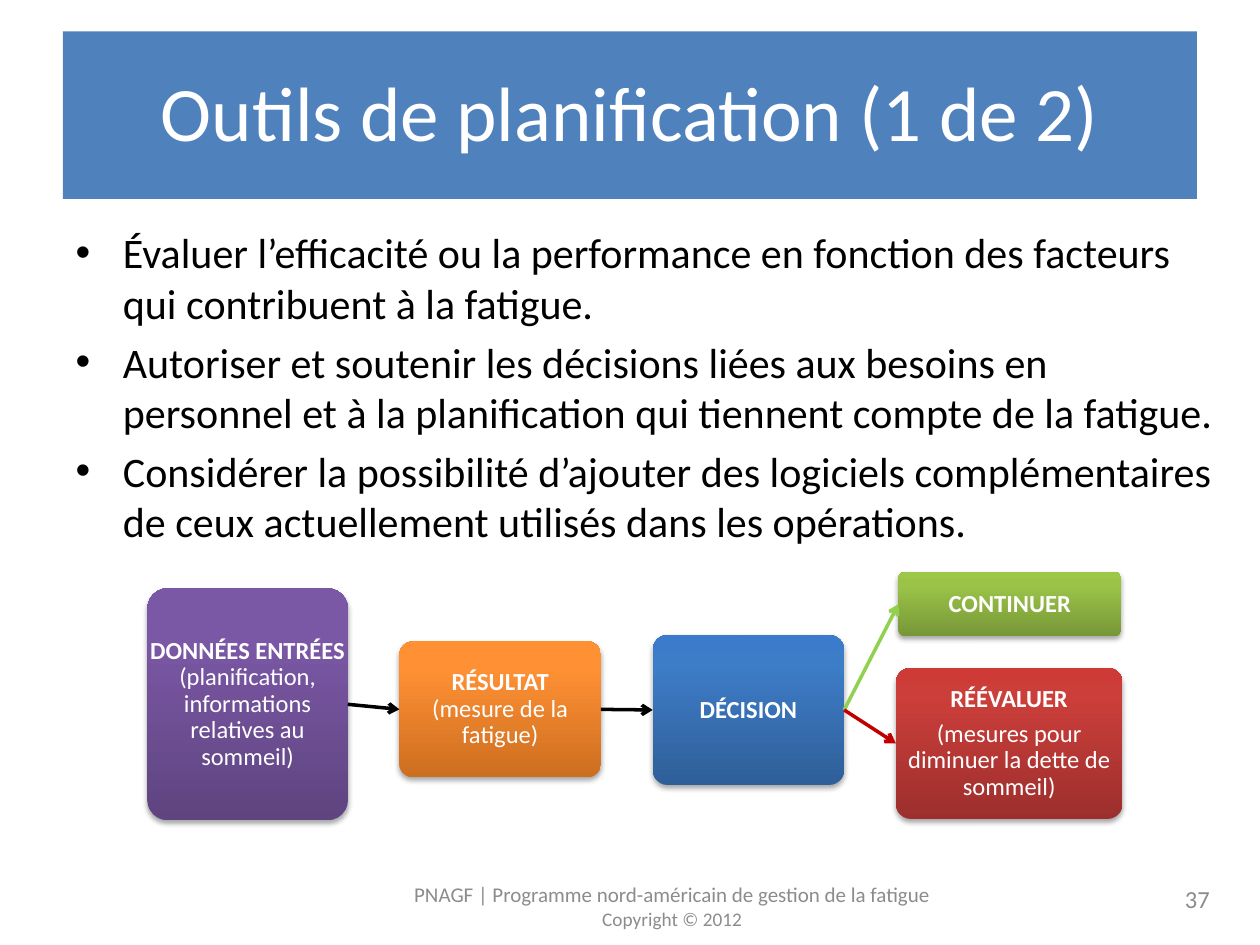
import pptx
import pptx.util
import pptx.dml.color
import pptx.enum.shapes
import pptx.enum.text
import pptx.oxml.ns
from lxml import etree

Inches = pptx.util.Inches
Pt = pptx.util.Pt
qn = pptx.oxml.ns.qn
ALIGN = pptx.enum.text.PP_ALIGN
ANCHOR = pptx.enum.text.MSO_ANCHOR
SHAPE = pptx.enum.shapes.MSO_SHAPE

COLORS = {
    "band": "4F81BD", "white": "FFFFFF", "black": "000000",
    "footer": "8C8C8C", "continue": "92D050", "reassess": "C00000",
}
FONT = "Calibri"
TITLE = "Outils de planification (1 de 2)"
BULLETS = [
    "Évaluer l’efficacité ou la performance en fonction des facteurs qui contribuent à la fatigue.",
    "Autoriser et soutenir les décisions liées aux besoins en personnel et à la planification qui tiennent compte de la fatigue.",
    "Considérer la possibilité d’ajouter des logiciels complémentaires de ceux actuellement utilisés dans les opérations.",
]
FOOTER = [("PNAGF | Programme nord-américain de gestion de la fatigue", 12), ("Copyright © 2012", 11)]
PAGE_NUMBER = [("37", 14)]

STEPS = {
    "input": {"box": (1.17, 4.67, 1.59, 1.84), "gradient": ("5F4480", "7B58A6", "7C57A8"),
              "paragraphs": [["DONNÉES ENTRÉES", "(planification, informations relatives au sommeil)"]]},
    "result": {"box": (3.17, 5.09, 1.6, 1.08), "gradient": ("CC6E20", "FF9034", "FF9136"),
               "paragraphs": [["RÉSULTAT", "(mesure de la fatigue)"]]},
    "decision": {"box": (5.18, 5.04, 1.52, 1.19), "gradient": ("2F5F99", "3D7CC7", "3A7CCB"),
                 "paragraphs": [["DÉCISION"]]},
    "continue": {"box": (7.13, 4.54, 1.77, 0.51), "gradient": ("779737", "9BC348", "9DC746"),
                 "paragraphs": [["CONTINUER"]]},
    "reassess": {"box": (7.11, 5.3, 1.8, 1.2), "gradient": ("9C2F2D", "CB3E3A", "CE3B37"),
                 "paragraphs": [["RÉÉVALUER"], ["(mesures pour diminuer la dette de sommeil)"]]},
}
ARROWS = [
    ("input", "result", "black"),
    ("result", "decision", "black"),
    ("decision", "continue", "continue"),
    ("decision", "reassess", "reassess"),
]
STOP_POSITIONS = (0, 80, 100)
STEP_PARAGRAPH = {"alignment": ALIGN.CENTER, "line_spacing": 0.9, "space_after": Pt(5)}


def set_values(target, values):
    for name, value in values.items():
        setattr(target, name, value)


def place(shape, box):
    set_values(shape, dict(zip(("left", "top", "width", "height"), map(Inches, box))))


def rgb(name):
    return pptx.dml.color.RGBColor.from_string(COLORS[name])


def add_run(paragraph, text, size, color, bold=False):
    run = paragraph.add_run()
    run.text = text
    set_values(run.font, {"name": FONT, "size": Pt(size), "bold": bold})
    run.font.color.rgb = rgb(color)


def paragraphs_of(frame, count):
    while len(frame.paragraphs) < count:
        frame.add_paragraph()
    return frame.paragraphs


def add_text_box(slide, box, margin):
    frame = slide.shapes.add_textbox(*map(Inches, box)).text_frame
    set_values(frame, {"word_wrap": True, "vertical_anchor": ANCHOR.MIDDLE})
    set_values(frame, {f"margin_{side}": Inches(margin) for side in ("left", "right", "top", "bottom")})
    return frame


def add_band(slide):
    band = slide.shapes.add_shape(SHAPE.RECTANGLE, *map(Inches, (0.5, 0.25, 9, 1.33)))
    band.shadow.inherit = False
    band.fill.solid()
    band.fill.fore_color.rgb = rgb("band")
    band.line.fill.background()
    slide.shapes._spTree.insert(2, band._element)


def fill_placeholders(slide):
    title, body = slide.placeholders
    place(title, (0.5, 0.3, 9, 1.25))
    title.text_frame.vertical_anchor = ANCHOR.MIDDLE
    heading = title.text_frame.paragraphs[0]
    set_values(heading, {"alignment": ALIGN.CENTER, "line_spacing": Pt(45.8)})
    add_run(heading, TITLE, 44, "white")
    place(body, (0.5, 1.75, 9.33, 4.95))
    for paragraph, text in zip(paragraphs_of(body.text_frame, len(BULLETS)), BULLETS):
        add_run(paragraph, text, 24, "black")


def add_footer_text(slide, box, lines, alignment):
    frame = add_text_box(slide, box, 0.1)
    for paragraph, (text, size) in zip(paragraphs_of(frame, len(lines)), lines):
        paragraph.alignment = alignment
        add_run(paragraph, text, size, "footer")


def add_step(slide, step):
    shape = slide.shapes.add_shape(SHAPE.ROUNDED_RECTANGLE, *map(Inches, step["box"]))
    shape.adjustments[0] = 0.1
    shape.line.fill.background()
    shape.fill.gradient()
    shape.fill.gradient_angle = 90
    properties = shape._element.spPr
    stops = properties.find(".//" + qn("a:gsLst"))
    for stop in list(stops):
        stops.remove(stop)
    for position, color in zip(STOP_POSITIONS, step["gradient"]):
        stop = etree.SubElement(stops, qn("a:gs"), pos=str(position * 1000))
        etree.SubElement(stop, qn("a:srgbClr"), val=color)

    shape.shadow.inherit = False
    shadow = etree.SubElement(
        properties.find(qn("a:effectLst")), qn("a:outerShdw"),
        blurRad=str(Pt(3.1)), dist=str(Pt(1.8)), dir="5400000", rotWithShape="0")
    shadow_color = etree.SubElement(shadow, qn("a:srgbClr"), val=COLORS["black"])
    etree.SubElement(shadow_color, qn("a:alpha"), val="35000")

    frame = add_text_box(slide, step["box"], 0.01)
    lines_by_paragraph = step["paragraphs"]
    for paragraph, lines in zip(paragraphs_of(frame, len(lines_by_paragraph)), lines_by_paragraph):
        set_values(paragraph, STEP_PARAGRAPH)
        for index, line in enumerate(lines):
            if index:
                paragraph.add_line_break()
            add_run(paragraph, line, 14, "white", bold=not line.startswith("("))
    return shape


def add_arrow(slide, start, end, color):
    arrow = slide.shapes.add_connector(pptx.enum.shapes.MSO_CONNECTOR.STRAIGHT, 0, 0, 0, 0)
    arrow.begin_connect(start, 3)
    arrow.end_connect(end, 1)
    arrow.line.color.rgb = rgb(color)
    arrow.line.width = Pt(2)
    properties = arrow._element.spPr
    etree.SubElement(properties.find(qn("a:ln")), qn("a:tailEnd"), type="arrow")
    etree.SubElement(properties, qn("a:effectLst"))


def main():
    presentation = pptx.Presentation()
    presentation.slide_width = Inches(10)
    presentation.slide_height = Inches(7.5)
    slide = presentation.slides.add_slide(presentation.slide_layouts[1])
    add_band(slide)
    fill_placeholders(slide)
    add_footer_text(slide, (3, 7, 4.67, 0.38), FOOTER, ALIGN.CENTER)
    add_footer_text(slide, (7.37, 6.93, 2.33, 0.4), PAGE_NUMBER, ALIGN.RIGHT)
    shapes = {name: add_step(slide, step) for name, step in STEPS.items()}
    for start, end, color in ARROWS:
        add_arrow(slide, shapes[start], shapes[end], color)
    presentation.save("out.pptx")


if __name__ == "__main__":
    main()
